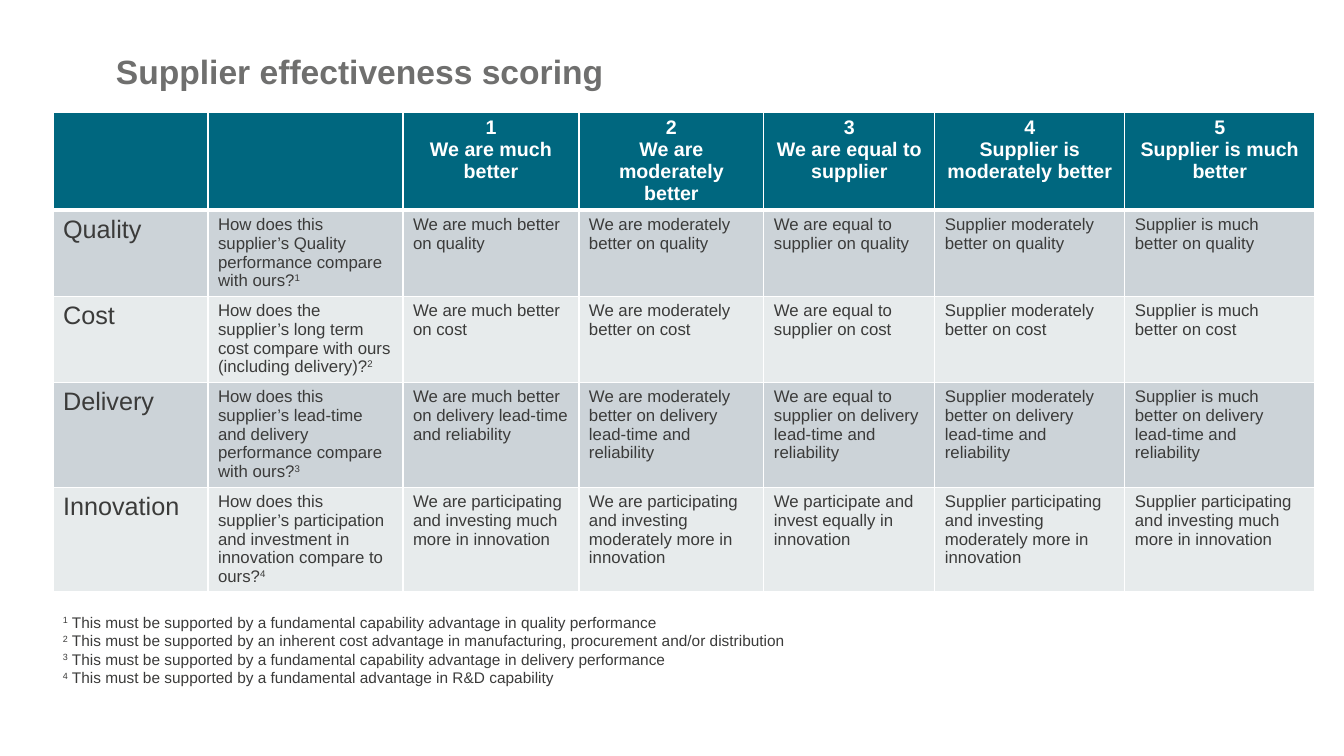
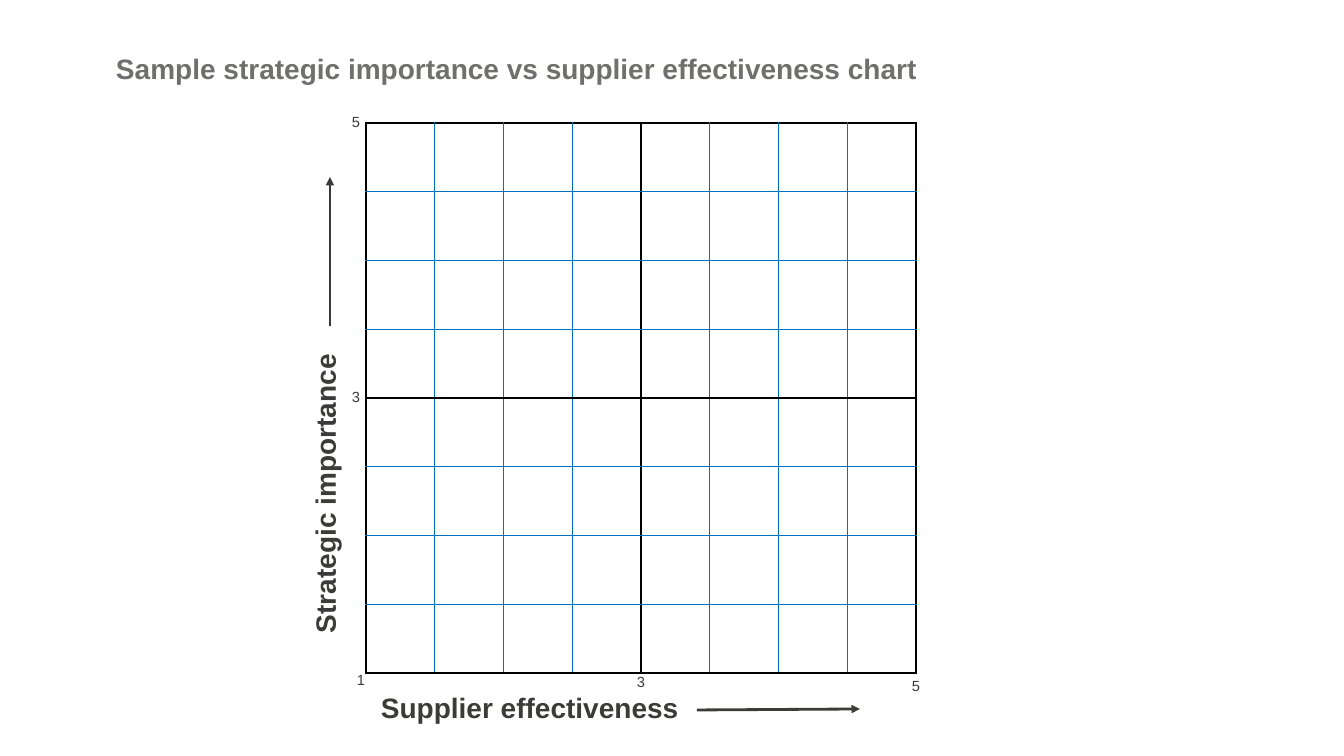
"""Build two slides on supplier effectiveness: a scoring table and a blank chart grid."""
from lxml.etree import SubElement as Sub
from pptx import Presentation
from pptx.dml.color import RGBColor as RGB
from pptx.enum.shapes import MSO_CONNECTOR as Con
from pptx.enum.text import MSO_ANCHOR as Anchor, MSO_AUTO_SIZE as Auto, PP_ALIGN as Align
from pptx.oxml.ns import qn
from pptx.util import Pt

SCALE = 914400 / 100.8
FONT = "Arial"
HUES = {"title": "6F6F6E", "text": "3B3B3A", "head": "00677F", "dark": "CCD3D8",
        "light": "E7EBEC", "white": "FFFFFF", "black": "000000", "blue": "0070C0"}

SCORES = ["We are much better", "We are moderately better", "We are equal to supplier",
          "Supplier is moderately better", "Supplier is much better"]
ANSWERS = ["We are much better on {}", "We are moderately better on {}",
           "We are equal to supplier on {}", "Supplier moderately better on {}",
           "Supplier is much better on {}"]
TOPICS = [
    ("Quality", "How does this supplier’s Quality performance compare with ours?",
     [a.format("quality") for a in ANSWERS]),
    ("Cost", "How does the supplier’s long term cost compare with ours (including delivery)?",
     [a.format("cost") for a in ANSWERS]),
    ("Delivery", "How does this supplier’s lead-time and delivery performance compare with ours?",
     [a.format("delivery lead-time and reliability") for a in ANSWERS]),
    ("Innovation",
     "How does this supplier’s participation and investment in innovation compare to ours?",
     ["We are participating and investing much more in innovation",
      "We are participating and investing moderately more in innovation",
      "We participate and invest equally in innovation",
      "Supplier participating and investing moderately more in innovation",
      "Supplier participating and investing much more in innovation"]),
]
NOTES = [
    "This must be supported by a fundamental capability advantage in quality performance",
    "This must be supported by an inherent cost advantage in manufacturing, "
    "procurement and/or distribution",
    "This must be supported by a fundamental capability advantage in delivery performance",
    "This must be supported by a fundamental advantage in R&D capability",
]
WIDTHS = [155, 195, 176, 185, 171, 190, 190]
HEIGHTS = [97, 86, 86, 105, 104]

CELLS = 8
GRID = (366, 123, 550, 550)
AXES = [("Supplier effectiveness", (371, 686, 327, 44), 0),
        ("Strategic importance", (165, 461, 320, 44), 270)]
ARROWS = [(697, 710, 860, 709), (330, 326, 330, 177)]
MARKS = [("1", 347, 666), ("3", 627, 668), ("5", 902, 672), ("5", 342, 108), ("3", 342, 383)]


def px(n):
    return round(n * SCALE)


def hue(name):
    return RGB.from_string(HUES[name])


def add_run(para, text, size, color="text", bold=False, sup=False):
    run = para.add_run()
    run.text = text
    font = run.font
    font.name, font.size, font.bold = FONT, Pt(size), bold
    font.color.rgb = hue(color)
    if sup:
        font._element.set("baseline", "30000")


def add_slide(deck, title, size):
    slide = deck.slides.add_slide(deck.slide_layouts[5])
    box = slide.shapes.title
    box.left, box.top, box.width, box.height = map(px, (116, 50, 1137, 50))
    frame = box.text_frame
    frame.auto_size, frame.word_wrap = Auto.NONE, True
    frame.vertical_anchor = Anchor.TOP
    frame.margin_left = 0
    para = frame.paragraphs[0]
    para.alignment, para.line_spacing = Align.LEFT, 0.9
    add_run(para, title, size, "title", True)
    return slide


def add_box(slide, area, wrap=True):
    box = slide.shapes.add_textbox(*map(px, area))
    box.text_frame.word_wrap = wrap
    return box


def add_table(slide, rows, cols, area):
    table = slide.shapes.add_table(rows, cols, *map(px, area)).table
    table.first_row = table.horz_banding = False
    return table


def set_edges(cell, edges):
    props = cell._tc.get_or_add_tcPr()
    for side, (color, width) in zip("LRTB", edges):
        line = Sub(props, qn(f"a:ln{side}"), w=str(Pt(width)))
        Sub(Sub(line, qn("a:solidFill")), qn("a:srgbClr"), val=HUES[color])


def set_fill(cell, color):
    cell.fill.solid()
    cell.fill.fore_color.rgb = hue(color)


def add_scores(slide):
    table = add_table(slide, len(HEIGHTS), len(WIDTHS), (53, 112, sum(WIDTHS), sum(HEIGHTS)))
    for col, width in zip(table.columns, WIDTHS):
        col.width = px(width)
    thin, thick = ("white", 1), ("white", 3)
    for r, height in enumerate(HEIGHTS):
        table.rows[r].height = px(height)
        for c in range(len(WIDTHS)):
            cell = table.cell(r, c)
            set_edges(cell, (thin, thin, thick if r == 1 else thin, thick if r == 0 else thin))
            set_fill(cell, "head" if r == 0 else "dark" if r % 2 else "light")
    for n, score in enumerate(SCORES, 1):
        frame = table.cell(0, n + 1).text_frame
        for para, text in ((frame.paragraphs[0], str(n)), (frame.add_paragraph(), score)):
            para.alignment = Align.CENTER
            add_run(para, text, 14, "white", True)
    for r, (topic, query, answers) in enumerate(TOPICS, 1):
        for c, text in enumerate([topic, query, *answers]):
            para = table.cell(r, c).text_frame.paragraphs[0]
            add_run(para, text, 12 if c else 18)
            if c == 1:
                add_run(para, str(r), 12, sup=True)


def add_notes(slide):
    frame = add_box(slide, (53, 608, 1262, 85)).text_frame
    for n, note in enumerate(NOTES, 1):
        para = frame.paragraphs[0] if n == 1 else frame.add_paragraph()
        add_run(para, str(n), 11, sup=True)
        add_run(para, " " + note, 11)


def add_grid(slide):
    table = add_table(slide, CELLS, CELLS, GRID)
    for n in range(CELLS):
        table.columns[n].width = px(GRID[2] / CELLS)
        table.rows[n].height = px(GRID[3] / CELLS)

    def edge(n):
        return ("blue", 0.5) if n % (CELLS // 2) else ("black", 1.5)

    for r in range(CELLS):
        for c in range(CELLS):
            cell = table.cell(r, c)
            set_edges(cell, (edge(c), edge(c + 1), edge(r), edge(r + 1)))
            cell.fill.background()


def add_arrow(slide, ends):
    arrow = slide.shapes.add_connector(Con.STRAIGHT, *map(px, ends))
    arrow.line.color.rgb = hue("text")
    arrow.line.width = Pt(2)
    props = arrow._element.spPr
    Sub(props.find(qn("a:ln")), qn("a:tailEnd"), type="triangle")
    Sub(props, qn("a:effectLst"))


def main():
    deck = Presentation()
    deck.slide_width, deck.slide_height = px(1344), px(756)

    slide = add_slide(deck, "Supplier effectiveness scoring", 24)
    add_scores(slide)
    add_notes(slide)

    slide = add_slide(deck, "Sample strategic importance vs supplier effectiveness chart", 20)
    add_grid(slide)
    for text, area, turn in AXES:
        box = add_box(slide, area)
        box.rotation = turn
        add_run(box.text_frame.paragraphs[0], text, 20, bold=True)
    for ends in ARROWS:
        add_arrow(slide, ends)
    for text, left, top in MARKS:
        box = add_box(slide, (left, top, 28, 29), False)
        add_run(box.text_frame.paragraphs[0], text, 10.5)

    deck.save("out.pptx")


if __name__ == "__main__":
    main()
